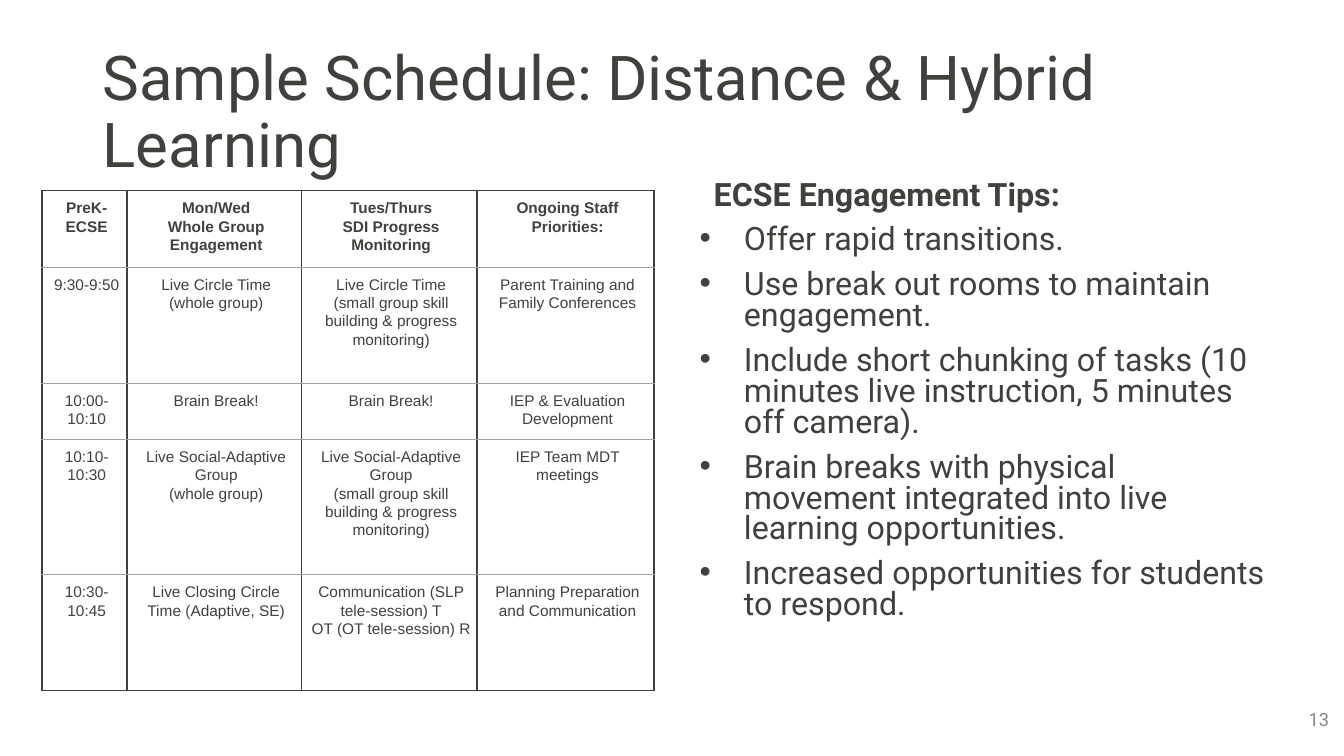
import pptx
import pptx.dml.color
import pptx.enum.text
import pptx.oxml
import pptx.oxml.ns
import pptx.util
from pptx.util import Inches

DARK, RULE, GREY = "40403D", "A1A19B", "888888"
ALIGN = pptx.enum.text.PP_ALIGN
NS = pptx.oxml.ns.nsdecls("a")


def paint(item, tone):
    item.color.rgb = pptx.dml.color.RGBColor.from_string(tone)


def write(para, text, tone, looks, form):
    """Fill one paragraph with a run and apply its formats."""
    run = para.add_run()
    run.text = text
    for key, val in looks.items():
        setattr(run.font, key, val)
    for key, val in form.items():
        setattr(para, key, val)
    paint(run.font, tone)


deck = pptx.Presentation()
deck.slide_width, deck.slide_height = Inches(13.33), Inches(7.5)
slide = deck.slides.add_slide(deck.slide_layouts[6])

# Text blocks: place, top inset, lines, colour, font formats, paragraph formats
tips = [
    "ECSE Engagement Tips:",
    "Offer rapid transitions.",
    "Use break out rooms to maintain engagement.",
    "Include short chunking of tasks (10 minutes live instruction, 5 minutes off camera).",
    "Brain breaks with physical movement integrated into live learning opportunities.",
    "Increased opportunities for students to respond.",
]
blocks = [
    ((0.92, 0.4, 11.5, 1.45), 0.07, ["Sample Schedule: Distance & Hybrid Learning"], DARK,
     {"size": pptx.util.Pt(44.1)}, {"line_spacing": 0.9}),
    ((6.78, 1.75, 5.89, 4.95), 0.05, tips, DARK,
     {"size": pptx.util.Pt(23)}, {"line_spacing": 0.8, "space_before": pptx.util.Pt(10)}),
    ((12.48, 6.93, 0.8, 0.57), 0.1, ["13"], GREY,
     {"size": pptx.util.Pt(13)}, {"alignment": ALIGN.RIGHT, "space_after": pptx.util.Pt(6)}),
]
for place, inset, lines, tone, looks, form in blocks:
    frame = slide.shapes.add_textbox(*map(Inches, place)).text_frame
    frame.word_wrap = True
    frame.margin_top = Inches(inset)
    for num, line in enumerate(lines):
        para = frame.paragraphs[0] if num == 0 else frame.add_paragraph()
        write(para, line, tone, {"name": "Roboto", **looks}, form)
        if lines is not tips:
            continue
        # Heading is bold and indented, the tips below it are bulleted
        props = para._p.get_or_add_pPr()
        if num == 0:
            para.runs[0].font.bold = True
            props.set("marL", str(Inches(0.2)))
            props.set("indent", "0")
        else:
            props.set("marL", str(Inches(0.5)))
            props.set("indent", str(Inches(-0.44)))
            for mark in (f'<a:buClr {NS}><a:srgbClr val="{DARK}"/></a:buClr>',
                         f'<a:buFont {NS} typeface="Arial"/>',
                         f'<a:buChar {NS} char="•"/>'):
                props.append(pptx.oxml.parse_xml(mark))

# Schedule table
plan = [
    ["PreK-ECSE", "Mon/Wed\nWhole Group Engagement",
     "Tues/Thurs\nSDI Progress Monitoring", "Ongoing Staff Priorities:"],
    ["9:30-9:50", "Live Circle Time\n(whole group)",
     "Live Circle Time\n(small group skill building & progress monitoring)",
     "Parent Training and Family Conferences"],
    ["10:00-10:10", "Brain Break!", "Brain Break!", "IEP & Evaluation Development"],
    ["10:10-10:30", "Live Social-Adaptive Group\n(whole group)",
     "Live Social-Adaptive Group\n(small group skill building & progress monitoring)",
     "IEP Team MDT meetings"],
    ["10:30-10:45", "Live Closing Circle Time (Adaptive, SE)",
     "Communication (SLP tele-session) T\nOT (OT tele-session) R",
     "Planning Preparation and Communication"],
]
widths = [0.84, 1.73, 1.74, 1.76]
heights = [0.76, 1.15, 0.56, 1.34, 1.15]
table = slide.shapes.add_table(
    len(plan), len(widths), Inches(0.42), Inches(1.89),
    Inches(sum(widths)), Inches(sum(heights))).table
table.first_row = table.horz_banding = False
for col, width in zip(table.columns, widths):
    col.width = Inches(width)
for row, height in zip(table.rows, heights):
    row.height = Inches(height)

pads = {"margin_left": 0.1, "margin_top": 0.08, "margin_right": 0.06, "margin_bottom": 0.08}
last = len(plan) - 1
for r, words in enumerate(plan):
    for c, text in enumerate(words):
        cell = table.cell(r, c)
        for key, val in pads.items():
            setattr(cell, key, Inches(val))
        for num, line in enumerate(text.split("\n")):
            frame = cell.text_frame
            para = frame.paragraphs[0] if num == 0 else frame.add_paragraph()
            write(para, line, DARK,
                  {"name": "Arial", "size": pptx.util.Pt(11), "bold": r == 0},
                  {"alignment": ALIGN.CENTER, "line_spacing": 1.07})
        # Dark outer frame and columns, thin grey lines between rows
        sides = {"L": True, "R": True, "T": r == 0, "B": r == last}
        for side, thick in sides.items():
            size = pptx.util.Pt(1.5 if thick else 0.75)
            tone = DARK if thick else RULE
            cell._tc.get_or_add_tcPr().append(pptx.oxml.parse_xml(
                f'<a:ln{side} {NS} w="{size}"><a:solidFill>'
                f'<a:srgbClr val="{tone}"/></a:solidFill></a:ln{side}>'))
        cell.fill.background()

deck.save("out.pptx")
